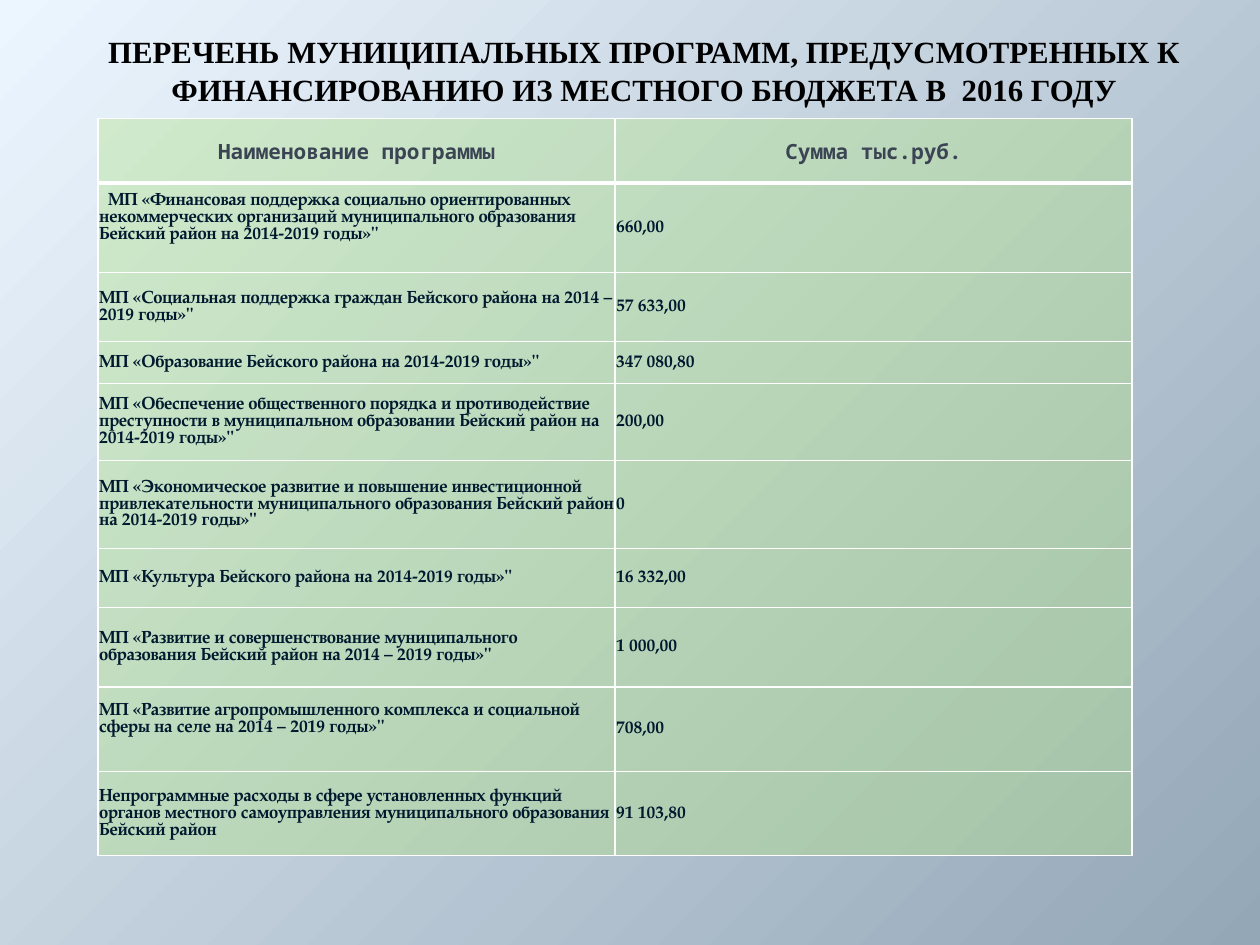
from lxml import etree
from pptx import Presentation
from pptx import oxml
from pptx import util as u
from pptx.dml import color
from pptx.enum import text

Cm, Pt = u.Cm, u.Pt
RGB = color.RGBColor.from_string
COLORS = {
    "sky": "ECF6FF",
    "slate": "94A7B7",
    "green": "B2E389",
    "border": "FFFFFF",
    "header": "3B4453",
    "body": "00192F",
    "title": "000000",
}
ROWS = [
    (1.3, "Наименование программы", "Сумма тыс.руб."),
    (1.8, "МП «Финансовая поддержка социально ориентированных некоммерческих организаций муниципального образования Бейский район на 2014-2019 годы»\"", "660,00"),
    (1.4, "МП «Социальная поддержка граждан Бейского района на 2014 – 2019 годы»\"", "57 633,00"),
    (0.84, "МП «Образование Бейского района на 2014-2019 годы»\"", "347 080,80"),
    (1.55, "МП «Обеспечение общественного порядка и противодействие преступности в муниципальном образовании Бейский район на 2014-2019 годы»\"", "200,00"),
    (1.78, "МП «Экономическое развитие и повышение инвестиционной привлекательности муниципального образования Бейский район на 2014-2019 годы»\"", "0"),
    (1.19, "МП «Культура Бейского района на 2014-2019 годы»\"", "16 332,00"),
    (1.6, "МП «Развитие и совершенствование муниципального образования Бейский район на 2014 – 2019 годы»\"", "1 000,00"),
    (1.7, "МП «Развитие агропромышленного комплекса и социальной сферы на селе на 2014 – 2019 годы»\"", "708,00"),
    (1.7, "Непрограммные расходы в сфере установленных функций органов местного самоуправления муниципального образования Бейский район", "91 103,80"),
]
RAISED_ROWS = (1, 8)


def add_span(para, words, font, size, shade):
    span = para.add_run()
    span.text = words
    span.font.name = font
    span.font.size = Pt(size)
    span.font.bold = True
    span.font.color.rgb = RGB(COLORS[shade])


def style_cell(cell, widths):
    cell.fill.solid()
    cell.fill.fore_color.rgb = RGB(COLORS["green"])
    props = cell._tc.get_or_add_tcPr()
    tint = props.find(".//" + oxml.ns.qn("a:srgbClr"))
    etree.SubElement(tint, oxml.ns.qn("a:alpha")).set("val", "40000")
    for place, (side, width) in enumerate(widths.items()):
        line = etree.Element(oxml.ns.qn("a:ln" + side), w=str(Pt(width)))
        fill = etree.SubElement(line, oxml.ns.qn("a:solidFill"))
        etree.SubElement(fill, oxml.ns.qn("a:srgbClr"), val=COLORS["border"])
        props.insert(place, line)


deck = Presentation()
deck.slide_width, deck.slide_height = Cm(25.4), Cm(19.05)
page = deck.slides.add_slide(deck.slide_layouts[6])

backdrop = page.background.fill
backdrop.gradient()
backdrop.gradient_angle = 315
for stop, shade, position in zip(backdrop.gradient_stops, ("sky", "slate"), (0, 1)):
    stop.color.rgb = RGB(COLORS[shade])
    stop.position = position

height = sum(row[0] for row in ROWS)
table = page.shapes.add_table(
    len(ROWS), 2, Cm(1.98), Cm(2.39), Cm(20.84), Cm(height)
).table
table.first_row = False
table.horz_banding = False
for column in table.columns:
    column.width = Cm(10.42)

for index, (row_height, *entries) in enumerate(ROWS):
    table.rows[index].height = Cm(row_height)
    is_header = index == 0
    widths = {"L": 1, "R": 1, "T": 3 if index == 1 else 1, "B": 3 if is_header else 1}
    for number, words in enumerate(entries):
        cell = table.cell(index, number)
        cell.margin_left = cell.margin_right = cell.margin_top = Cm(0.02)
        cell.margin_bottom = Cm(0)
        cell.vertical_anchor = text.MSO_ANCHOR.MIDDLE
        style_cell(cell, widths)
        para = cell.text_frame.paragraphs[0]
        if is_header:
            para.alignment = text.PP_ALIGN.CENTER
            add_span(para, words, "Noto Sans Mono", 12, "header")
        else:
            para.alignment = text.PP_ALIGN.LEFT
            para.line_spacing = Pt(9.7)
            add_span(para, words, "TeX Gyre Pagella", 10, "body")

for index in RAISED_ROWS:
    table.cell(index, 0).margin_bottom = Cm(0.38)
first_para = table.cell(1, 0).text_frame.paragraphs[0]
first_para._p.get_or_add_pPr().set("indent", str(Cm(0.18)))

box = page.shapes.add_textbox(Cm(1.98), Cm(0.58), Cm(22.02), Cm(1.6))
frame = box.text_frame
frame.word_wrap = True
frame.vertical_anchor = text.MSO_ANCHOR.BOTTOM
frame.margin_left = frame.margin_right = Cm(0.13)
frame.margin_top = frame.margin_bottom = Cm(0)
para = frame.paragraphs[0]
para.alignment = text.PP_ALIGN.CENTER
para.line_spacing = 1.05
add_span(
    para,
    "ПЕРЕЧЕНЬ МУНИЦИПАЛЬНЫХ ПРОГРАММ, ПРЕДУСМОТРЕННЫХ К ФИНАНСИРОВАНИЮ ИЗ МЕСТНОГО БЮДЖЕТА В  2016 ГОДУ",
    "Times New Roman", 17.6, "title",
)

deck.save("out.pptx")
